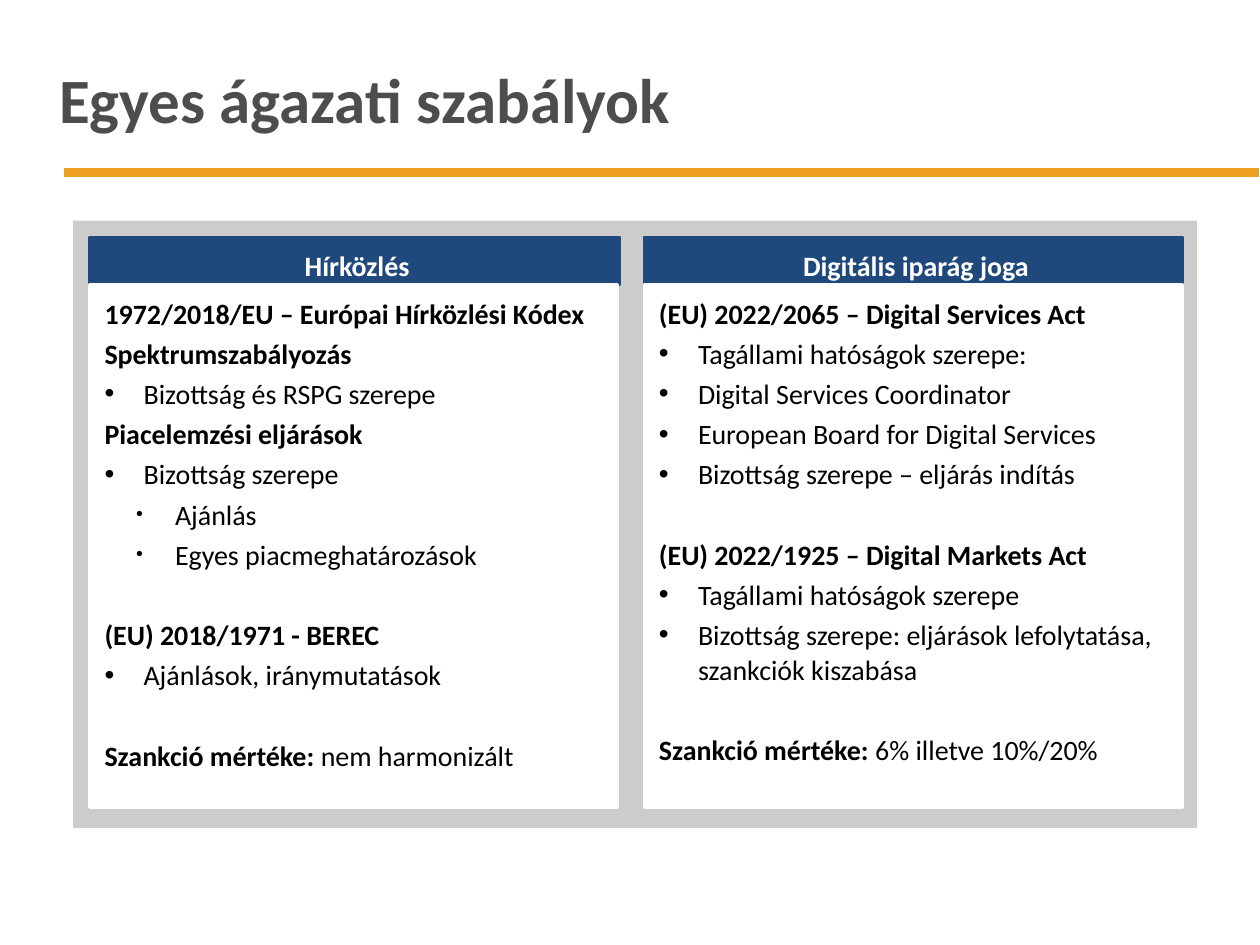
from pptx import Presentation
from pptx.dml.color import RGBColor
from pptx.enum import shapes, text
from pptx.oxml import ns
from pptx.util import Inches, Pt
from lxml import etree

# Content: each line is (kind, text) or (kind, bold text, plain text)
TITLE = "Egyes ágazati szabályok"
COLS = [
    ("Hírközlés", [
        ("head", "1972/2018/EU – Európai Hírközlési Kódex"),
        ("head", "Spektrumszabályozás"),
        ("item", "Bizottság és RSPG szerepe"),
        ("head", "Piacelemzési eljárások"),
        ("item", "Bizottság szerepe"),
        ("sub", "Ajánlás"),
        ("sub", "Egyes piacmeghatározások"),
        ("part", "(EU) 2018/1971 - BEREC"),
        ("item", "Ajánlások, iránymutatások"),
        ("part", "Szankció mértéke: ", "nem harmonizált"),
    ]),
    ("Digitális iparág joga", [
        ("head", "(EU) 2022/2065 – Digital Services Act"),
        ("item", "Tagállami hatóságok szerepe:"),
        ("item", "Digital Services Coordinator"),
        ("item", "European Board for Digital Services"),
        ("item", "Bizottság szerepe – eljárás indítás"),
        ("part", "(EU) 2022/1925 – Digital Markets Act"),
        ("item", "Tagállami hatóságok szerepe"),
        ("item", "Bizottság szerepe: eljárások lefolytatása, szankciók kiszabása"),
        ("part", "Szankció mértéke: ", "6% illetve 10%/20%"),
    ]),
]

THEME = dict(font="Calibri", title=36, body=16, grey="4D4D4D", gold="EDA021",
             panel="CCCCCC", blue="1F497D", white="FFFFFF", black="000000")

# Kind: bold, level, left indent, bullet size in %, space before
KINDS = {
    "head": (True, 0, 0, 0, 3),
    "part": (True, 0, 0, 0, 26),
    "item": (False, 0, 0.31, 100, 3),
    "sub": (False, 1, 0.56, 70, 3),
}
HANG = 0.31

# Columns: left, header width, body width
SPANS = [(0.71, 4.21, 4.19), (5.11, 4.28, 4.28)]
TOP, SPLIT, END = 1.88, 2.26, 6.41


def color(name):
    return RGBColor.from_string(THEME[name])


def place(shape, left, top, width, height):
    shape.left, shape.top = Inches(left), Inches(top)
    shape.width, shape.height = Inches(width), Inches(height)


def paint(shape, fill, line, width):
    shape.fill.solid()
    shape.fill.fore_color.rgb = color(fill)
    shape.line.color.rgb = color(line)
    shape.line.width = Pt(width)


def style(font, size, ink, bold):
    font.name, font.size, font.bold = THEME["font"], Pt(THEME[size]), bold
    font.color.rgb = color(ink)


def bullet(para, left, size):
    props = para._p.get_or_add_pPr()
    props.set("marL", str(Inches(left)))
    props.set("indent", str(-Inches(HANG) if size else 0))
    if not size:
        etree.SubElement(props, ns.qn("a:buNone"))
        return
    etree.SubElement(props, ns.qn("a:buSzPct"), val=str(size * 1000))
    etree.SubElement(props, ns.qn("a:buFont"), typeface="Arial")
    etree.SubElement(props, ns.qn("a:buChar"), char="•")


def write(para, kind, parts, ink):
    bold, level, left, size, gap = KINDS[kind]
    para.text = parts[0]
    para.level = level
    bullet(para, left, size)
    para.line_spacing, para.space_before = 1.04, Pt(gap)
    for part in parts[1:]:
        para.add_run().text = part
    for i, run in enumerate(para.runs):
        style(run.font, "body", ink, bold and i == 0)


def fill_box(shape, lines, ink):
    frame = shape.text_frame
    frame.auto_size = text.MSO_AUTO_SIZE.NONE
    frame.word_wrap = True
    frame.vertical_anchor = text.MSO_ANCHOR.TOP
    frame.margin_left = Inches(0.12)
    frame.margin_top = frame.margin_right = frame.margin_bottom = Inches(0.08)
    for i, (kind, *parts) in enumerate(lines):
        para = frame.add_paragraph() if i else frame.paragraphs[0]
        write(para, kind, parts, ink)
    frame.paragraphs[0].space_before = Pt(0)


def main():
    deck = Presentation()
    deck.slide_width, deck.slide_height = Inches(10), Inches(7.5)
    slide = deck.slides.add_slide(deck.slide_layouts[4])
    holds = slide.placeholders

    # Title
    title = slide.shapes.title
    place(title, 0.37, 0.29, 9.84, 0.98)
    title.text_frame.text = TITLE
    title.text_frame.vertical_anchor = text.MSO_ANCHOR.MIDDLE
    para = title.text_frame.paragraphs[0]
    para.alignment = text.PP_ALIGN.LEFT
    style(para.runs[0].font, "title", "grey", True)

    # Rule and grey panel, behind the text
    bands = [((0.58, 1.75, 8.92, 4.82), "panel", "panel", 0),
             ((0.5, 1.33, 9.5, 0.08), "gold", "white", 0.75)]
    for box, fill, line, width in bands:
        band = slide.shapes.add_shape(
            shapes.MSO_SHAPE.RECTANGLE, *map(Inches, box))
        band.shadow.inherit = False
        paint(band, fill, line, width)
        if not width:
            band.line.fill.background()
        slide.shapes._spTree.insert(2, band._element)

    # Two columns: header over list
    for i, ((name, lines), (left, wide, body)) in enumerate(zip(COLS, SPANS)):
        head, box = holds[1 + 2 * i], holds[2 + 2 * i]
        place(head, left, TOP, wide, SPLIT - TOP)
        paint(head, "blue", "blue", 1.5)
        fill_box(head, [("head", name)], "white")
        head.text_frame.paragraphs[0].alignment = text.PP_ALIGN.CENTER
        place(box, left, SPLIT, body, END - SPLIT)
        paint(box, "white", "white", 1.5)
        fill_box(box, lines, "black")

    deck.save("out.pptx")


if __name__ == "__main__":
    main()
